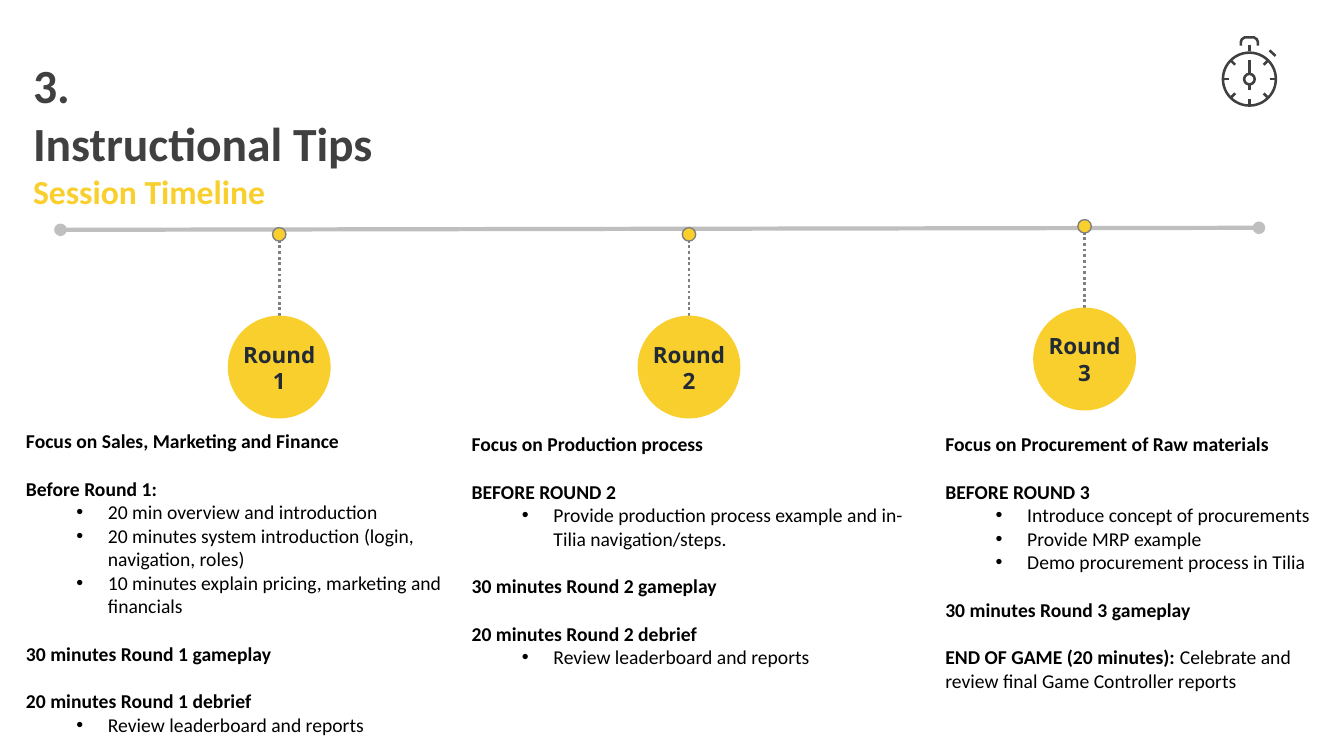
"""Builds the session timeline slide with three game rounds."""
from math import cos, radians, sin

from lxml.etree import SubElement as Sub
from pptx import Presentation
from pptx.dml.color import RGBColor as Rgb
from pptx.enum.dml import MSO_LINE as Dash
from pptx.enum.shapes import MSO_CONNECTOR as Conn, MSO_SHAPE as Kind
from pptx.enum.text import MSO_ANCHOR as Anchor, MSO_AUTO_SIZE as Auto, PP_ALIGN as Align
from pptx.oxml.ns import qn
from pptx.util import Inches, Pt


class Theme:
    gold = Rgb.from_string("F8CF2C")
    dark = Rgb.from_string("404040")
    navy = Rgb.from_string("222A35")
    black = Rgb.from_string("000000")
    gray = Rgb.from_string("808080")
    pale = Rgb.from_string("BFBFBF")
    body, label = "Calibri", "Open Sans"
    big, mid, tag, text = 34, 24, 16, 14
    gap = 17
    thick, drop, rim, pen = 3, 2, 1, 1.8


deck = Presentation()
deck.slide_width, deck.slide_height = Inches(40 / 3), Inches(7.5)
slide = deck.slides.add_slide(deck.slide_layouts[6])
shapes = slide.shapes
cell = deck.slide_width / 160


def grid(*vals):
    return [round(val * cell) for val in vals]


def link(ends, color, width, dash=None, cap=None):
    line = shapes.add_connector(Conn.STRAIGHT, *grid(*ends))
    line.line.color.rgb = color
    line.line.width = Pt(width)
    if dash:
        line.line.dash_style = dash
    if cap:
        for end in ("a:headEnd", "a:tailEnd"):
            Sub(line.line._ln, qn(end), type=cap)
    Sub(line._element.spPr, qn("a:effectLst"))


link((7.2, 27.36, 149.88, 27.12), Theme.pale, Theme.thick, cap="oval")

discs, texts = [], []
ball, dot, fall = 12.24, 1.6, 9.68
for num, (mid, top) in enumerate([(33.24, 27.9), (82.02, 27.9), (129.12, 26.94)], 1):
    edge = top + fall
    link((mid, edge + 0.7, mid, top), Theme.gray, Theme.drop, Dash.ROUND_DOT)
    discs += [(mid, edge + ball / 2, ball, Theme.gold, None, 0),
              (mid, top, dot, Theme.gold, Theme.gray, Theme.rim)]
    run = (f"Round {num}", Theme.tag, Theme.label, Theme.navy, True)
    texts.append(((mid - ball / 2, edge + 3.36, ball, 5.64), True, [(False, 0, [run])]))

hub_x, hub_y = 148.74, 9.42
discs += [(hub_x, hub_y, size, None, Theme.dark, Theme.pen) for size in (6.3, 1.26)]
marks = [(0, -4.1, 0, -3.3), (0, -2.3, 0, -0.75), (0, 0.75, 0, 1.25), (2.4, -3.42, 3.12, -2.76)]
for step in range(1, 8):
    turn = radians(45 * step - 90)
    marks.append([rad * part for rad in (2.4, 3.2) for part in (cos(turn), sin(turn))])
for x1, y1, x2, y2 in marks:
    link((hub_x + x1, hub_y + y1, hub_x + x2, hub_y + y2), Theme.dark, Theme.pen)

half = [(-1.02, -4), (-1.02, -4.4), (-0.9, -4.74), (-0.54, -4.98)]
arc = half + [(-x, y) for x, y in reversed(half)]
pts = [grid(hub_x + x, hub_y + y) for x, y in arc]
pen = shapes.build_freeform(*pts[0], scale=1.0)
pen.add_line_segments(pts[1:], close=False)
crown = pen.convert_to_shape()
crown.shadow.inherit = False
crown.fill.background()
crown.line.color.rgb = Theme.dark
crown.line.width = Pt(Theme.pen)

for mid, row, size, fill, rim, width in discs:
    disc = shapes.add_shape(Kind.OVAL, *grid(mid - size / 2, row - size / 2, size, size))
    disc.shadow.inherit = False
    if fill:
        disc.fill.solid()
        disc.fill.fore_color.rgb = fill
    else:
        disc.fill.background()
    if rim:
        disc.line.color.rgb = rim
        disc.line.width = Pt(width)
    else:
        disc.line.fill.background()

title = [("3.", Theme.big, Theme.dark), ("Instructional Tips", Theme.big, Theme.dark),
         ("Session Timeline", Theme.mid, Theme.gold)]
texts.append(((2.76, 6.12, 70.32, 23.4), False,
              [(False, 0, [(word, size, Theme.body, color, True)]) for word, size, color in title]))

plans = [
    ((1.92, 50.52, 54, 37.92), [
        ("Focus on Sales, Marketing and Finance", "", []),
        ("Before Round 1:", "", [
            "20 min overview and introduction",
            "20 minutes system introduction (login, navigation, roles)",
            "10 minutes explain pricing, marketing and financials"]),
        ("30 minutes Round 1 gameplay", "", []),
        ("20 minutes Round 1 debrief", "", ["Review leaderboard and reports"])]),
    ((54.96, 50.88, 56.28, 29.52), [
        ("Focus on Production process", "", []),
        ("BEFORE ROUND 2", "", [
            "Provide production process example and in-Tilia navigation/steps."]),
        ("30 minutes Round 2 gameplay", "", []),
        ("20 minutes Round 2 debrief", "", ["Review leaderboard and reports"])]),
    ((111.36, 50.88, 46.44, 35.16), [
        ("Focus on Procurement of Raw materials", "", []),
        ("BEFORE ROUND 3", "", [
            "Introduce concept of procurements",
            "Provide MRP example",
            "Demo procurement process in Tilia"]),
        ("30 minutes Round 3 gameplay", "", []),
        ("END OF GAME (20 minutes): ",
         "Celebrate and review final Game Controller reports", [])]),
]
plain = (Theme.text, Theme.body, Theme.black)
for place, parts in plans:
    paras = []
    for head, tail, items in parts:
        runs = [(head, *plain, True)] + ([(tail, *plain, False)] if tail else [])
        paras.append((False, Theme.gap if paras else 0, runs))
        paras += [(True, 0, [(item, *plain, False)]) for item in items]
    texts.append((place, False, paras))

for place, tag, paras in texts:
    frame = shapes.add_textbox(*grid(*place)).text_frame
    frame.word_wrap = True
    frame.vertical_anchor = Anchor.MIDDLE if tag else Anchor.TOP
    frame.auto_size = Auto.NONE if tag else Auto.SHAPE_TO_FIT_TEXT
    for num, (point, gap, runs) in enumerate(paras):
        para = frame.add_paragraph() if num else frame.paragraphs[0]
        para.alignment = Align.CENTER if tag else Align.LEFT
        if gap:
            para.space_before = Pt(gap)
        if point:
            para.level = 1
            props = para._p.get_or_add_pPr()
            left, hang = grid(9.75, -3.75)
            props.set("marL", str(left))
            props.set("indent", str(hang))
            Sub(props, qn("a:buFont"), typeface="Arial")
            Sub(props, qn("a:buChar"), char="•")
        for word, size, face, color, bold in runs:
            run = para.add_run()
            run.text = word
            run.font.size = Pt(size)
            run.font.name = face
            run.font.color.rgb = color
            run.font.bold = bold

deck.save("out.pptx")
